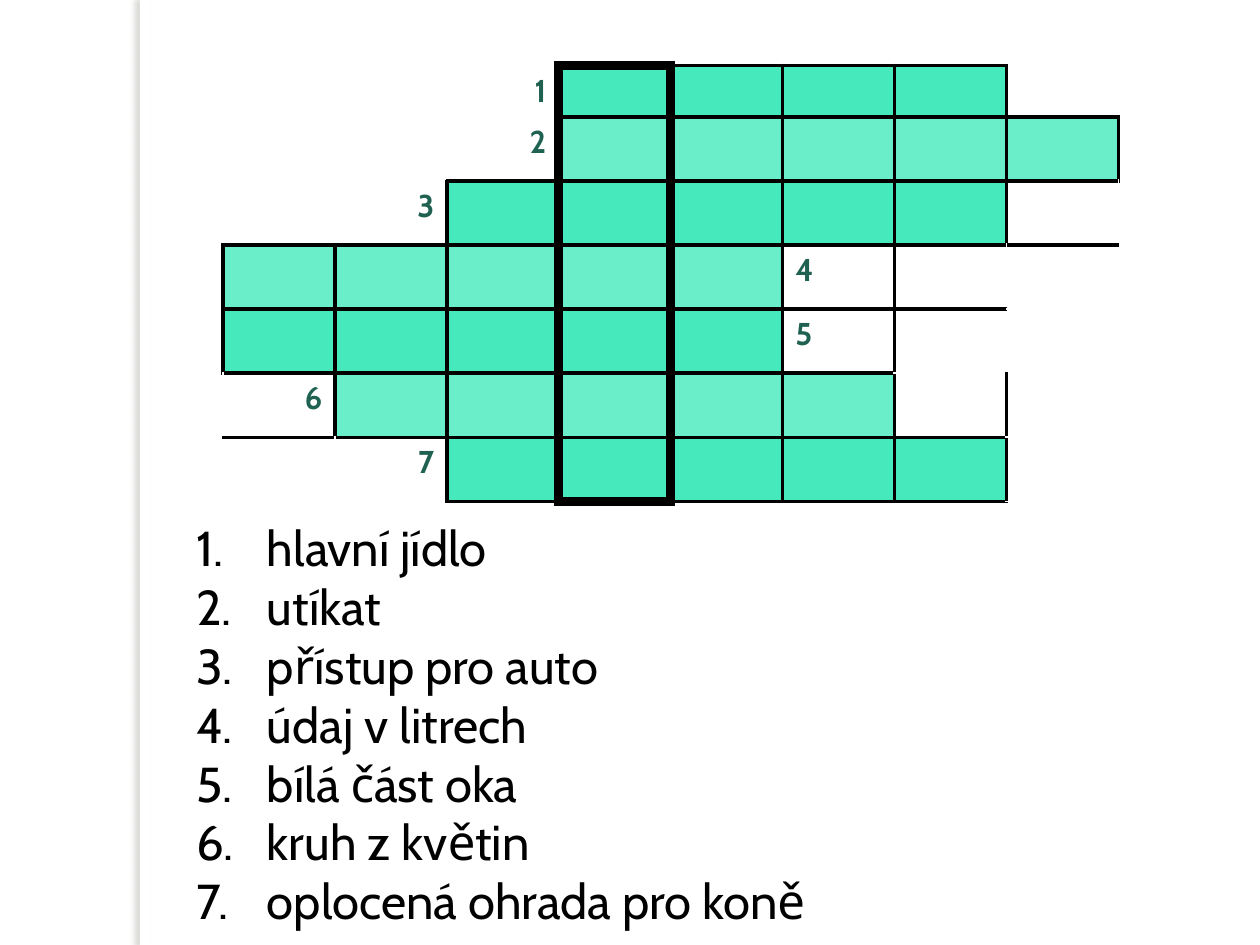
"""Build a crossword slide with seven numbered clues."""
from typing import Any, NamedTuple

import pptx
import pptx.dml.color
import pptx.enum.shapes
import pptx.enum.text
import pptx.oxml
import pptx.oxml.ns
import pptx.util

Pt = pptx.util.Pt
Align = pptx.enum.text.PP_ALIGN
SPACE = pptx.oxml.ns.nsdecls("a")
KEY = 3
COLS = 8
WIDTH = 64
HEIGHTS = [29.5] + [36.6] * 6
DARK, LIGHT, WHITE, BLACK = "45E9BC", "6AEDC9", "FFFFFF", "000000"
LABEL = {"size": Pt(18), "name": "Cabin", "bold": True}
BODY = {"size": Pt(28), "name": "Cabin"}


class Word(NamedTuple):
    start: int
    count: int
    clue: str

    def holds(self, col: int) -> bool:
        return self.start <= col < self.start + self.count


WORDS = [
    Word(3, 4, "hlavní jídlo"),
    Word(3, 5, "utíkat"),
    Word(2, 5, "přístup pro auto"),
    Word(0, 5, "údaj v litrech"),
    Word(0, 5, "bílá část oka"),
    Word(1, 5, "kruh z květin"),
    Word(2, 5, "oplocená ohrada pro koně"),
]


def tint(code: str) -> pptx.dml.color.RGBColor:
    return pptx.dml.color.RGBColor.from_string(code)


def paint(fill: Any, code: str) -> None:
    fill.solid()
    fill.fore_color.rgb = tint(code)


def write(para: Any, text: str, style: dict[str, Any], code: str) -> None:
    run = para.add_run()
    run.text = text
    for name, value in style.items():
        setattr(run.font, name, value)
    run.font.color.rgb = tint(code)


def inside(row: int, col: int) -> bool:
    return 0 <= row < len(WORDS) and WORDS[row].holds(col)


def edge(cell: Any, side: str, width: float) -> None:
    cell._tc.get_or_add_tcPr().append(pptx.oxml.parse_xml(
        f'<a:ln{side} {SPACE} w="{Pt(width)}"><a:solidFill>'
        f'<a:srgbClr val="{BLACK}"/></a:solidFill></a:ln{side}>'))


def frame(cell: Any, row: int, col: int) -> None:
    last = len(WORDS) - 1
    sides = [
        ("L", row, col - 1, col in (KEY, KEY + 1)),
        ("R", row, col + 1, col in (KEY - 1, KEY)),
        ("T", row - 1, col, col == KEY and row == 0),
        ("B", row + 1, col, col == KEY and row == last),
    ]
    for side, near, next_col, thick in sides:
        if inside(row, col) or inside(near, next_col):
            edge(cell, side, 6 if thick else 2.25)


def draw_bar(slide: Any) -> None:
    kind = pptx.enum.shapes.MSO_SHAPE.RECTANGLE
    bar = slide.shapes.add_shape(kind, Pt(80), 0, Pt(5.8), Pt(540))
    paint(bar.fill, WHITE)
    bar.line.fill.background()
    bar._element.spPr.append(pptx.oxml.parse_xml(
        f'<a:effectLst {SPACE}><a:outerShdw blurRad="{Pt(3)}" dist="{Pt(3)}" '
        'dir="10800000" rotWithShape="0"><a:srgbClr val="716F65">'
        '<a:alpha val="25000"/></a:srgbClr></a:outerShdw></a:effectLst>'))


def draw_grid(slide: Any) -> None:
    table = slide.shapes.add_table(
        len(WORDS), COLS, Pt(127.4), Pt(37.4),
        Pt(WIDTH * COLS), Pt(sum(HEIGHTS))).table
    table.first_row = table.horz_banding = False
    for column in table.columns:
        column.width = Pt(WIDTH)
    for row, word in enumerate(WORDS):
        table.rows[row].height = Pt(HEIGHTS[row])
        shade = LIGHT if row % 2 else DARK
        for col in range(COLS):
            cell = table.cell(row, col)
            frame(cell, row, col)
            paint(cell.fill, shade if word.holds(col) else WHITE)
        before = word.start > 0
        spot = word.start - 1 if before else word.count
        para = table.cell(row, spot).text_frame.paragraphs[0]
        para.alignment = Align.RIGHT if before else Align.LEFT
        write(para, str(row + 1), LABEL, "206252")


def draw_clues(slide: Any) -> None:
    box = slide.shapes.add_textbox(Pt(105), Pt(292.3), Pt(385), Pt(245))
    text = box.text_frame
    text.word_wrap = False
    text.auto_size = pptx.enum.text.MSO_AUTO_SIZE.SHAPE_TO_FIT_TEXT
    for row, word in enumerate(WORDS):
        para = text.add_paragraph() if row else text.paragraphs[0]
        props = para._p.get_or_add_pPr()
        props.set("marL", str(Pt(40.5)))
        props.set("indent", str(-Pt(40.5)))
        props.append(pptx.oxml.parse_xml(
            f'<a:buAutoNum {SPACE} type="arabicPeriod"/>'))
        write(para, word.clue, BODY, BLACK)


def main() -> None:
    deck = pptx.Presentation()
    deck.slide_width, deck.slide_height = Pt(720), Pt(540)
    slide = deck.slides.add_slide(deck.slide_layouts[6])
    draw_bar(slide)
    draw_grid(slide)
    draw_clues(slide)
    deck.save("out.pptx")


if __name__ == "__main__":
    main()
